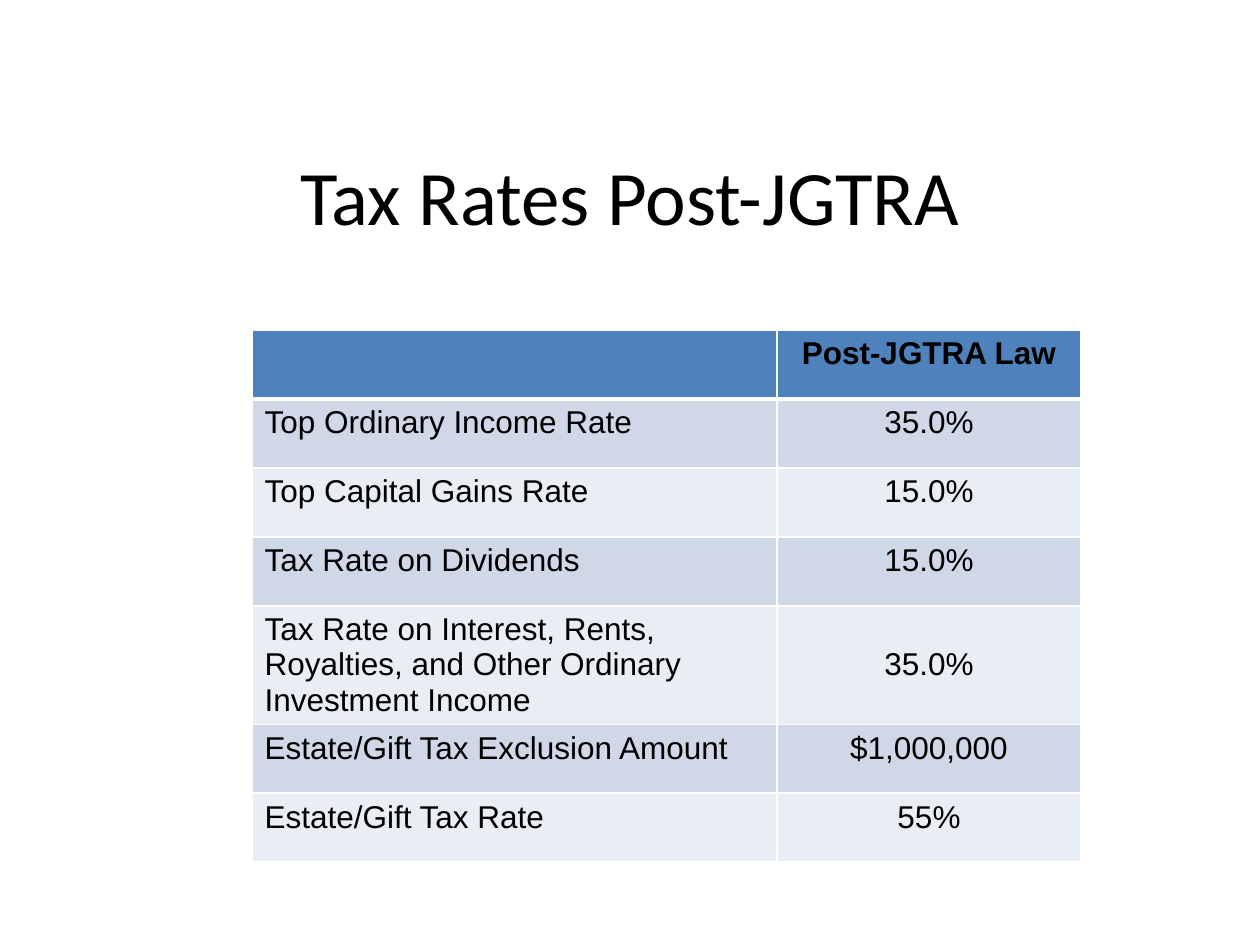
from lxml.etree import SubElement
from pptx import Presentation
from pptx.dml.color import RGBColor
from pptx.enum.text import MSO_ANCHOR, PP_ALIGN
from pptx.oxml.ns import qn
from pptx.util import Pt

SCALE = 914400 / 126
COLORS = {"text": "000000", "line": "FFFFFF", "head": "4F81BD",
          "odd": "D0D8E8", "even": "E9EDF4"}
ROWS = [
    ("", "Post-JGTRA Law"),
    ("Top Ordinary Income Rate", "35.0%"),
    ("Top Capital Gains Rate", "15.0%"),
    ("Tax Rate on Dividends", "15.0%"),
    ("Tax Rate on Interest, Rents, Royalties, and Other Ordinary Investment Income", "35.0%"),
    ("Estate/Gift Tax Exclusion Amount", "$1,000,000"),
    ("Estate/Gift Tax Rate", "55%"),
]
WIDTHS = (525, 304)
HEIGHT = 69
LONG = 4


def px(num):
    """Turn pixels into EMU."""
    return round(num * SCALE)


def style(para, font, size, align, bold=False):
    """Format one paragraph."""
    para.alignment = align
    para.font.name = font
    para.font.size = Pt(size)
    para.font.bold = bold
    para.font.color.rgb = RGBColor.from_string(COLORS["text"])


def add_title(slide, text):
    """Place and fill the title."""
    title = slide.shapes.title
    title.left, title.top, title.width, title.height = map(px, (63, 116, 1134, 158))
    frame = title.text_frame
    frame.text = text
    frame.vertical_anchor = MSO_ANCHOR.MIDDLE
    style(frame.paragraphs[0], "Calibri", 44, PP_ALIGN.CENTER)


def add_edges(cell, row):
    """Draw white cell borders, thick below the header."""
    thick = {(0, "lnB"), (1, "lnT")}
    props = cell._tc.get_or_add_tcPr()
    for side in ("lnL", "lnR", "lnT", "lnB"):
        width = Pt(3 if (row, side) in thick else 1)
        line = SubElement(props, qn(f"a:{side}"), w=str(width))
        fill = SubElement(line, qn("a:solidFill"))
        SubElement(fill, qn("a:srgbClr"), val=COLORS["line"])


def fill_cell(cell, text, row, col):
    """Write and colour one cell."""
    add_edges(cell, row)
    key = "head" if row == 0 else "odd" if row % 2 else "even"
    cell.fill.solid()
    cell.fill.fore_color.rgb = RGBColor.from_string(COLORS[key])
    cell.text = text
    if (row, col) == (LONG, 1):
        cell.vertical_anchor = MSO_ANCHOR.MIDDLE
    align = PP_ALIGN.CENTER if col else PP_ALIGN.LEFT
    style(cell.text_frame.paragraphs[0], "Arial", 18, align, row == 0)


def add_rates(slide):
    """Build the table of tax rates."""
    box = map(px, (252, 330, sum(WIDTHS), HEIGHT * len(ROWS)))
    table = slide.shapes.add_table(len(ROWS), len(WIDTHS), *box).table
    for col, width in enumerate(WIDTHS):
        table.columns[col].width = px(width)
    for row, texts in enumerate(ROWS):
        table.rows[row].height = px(HEIGHT)
        for col, text in enumerate(texts):
            fill_cell(table.cell(row, col), text, row, col)


def main():
    """Build and save the slide."""
    deck = Presentation()
    deck.slide_width, deck.slide_height = px(1260), px(945)
    slide = deck.slides.add_slide(deck.slide_layouts[5])
    add_title(slide, "Tax Rates Post-JGTRA")
    add_rates(slide)
    deck.save("out.pptx")


if __name__ == "__main__":
    main()
